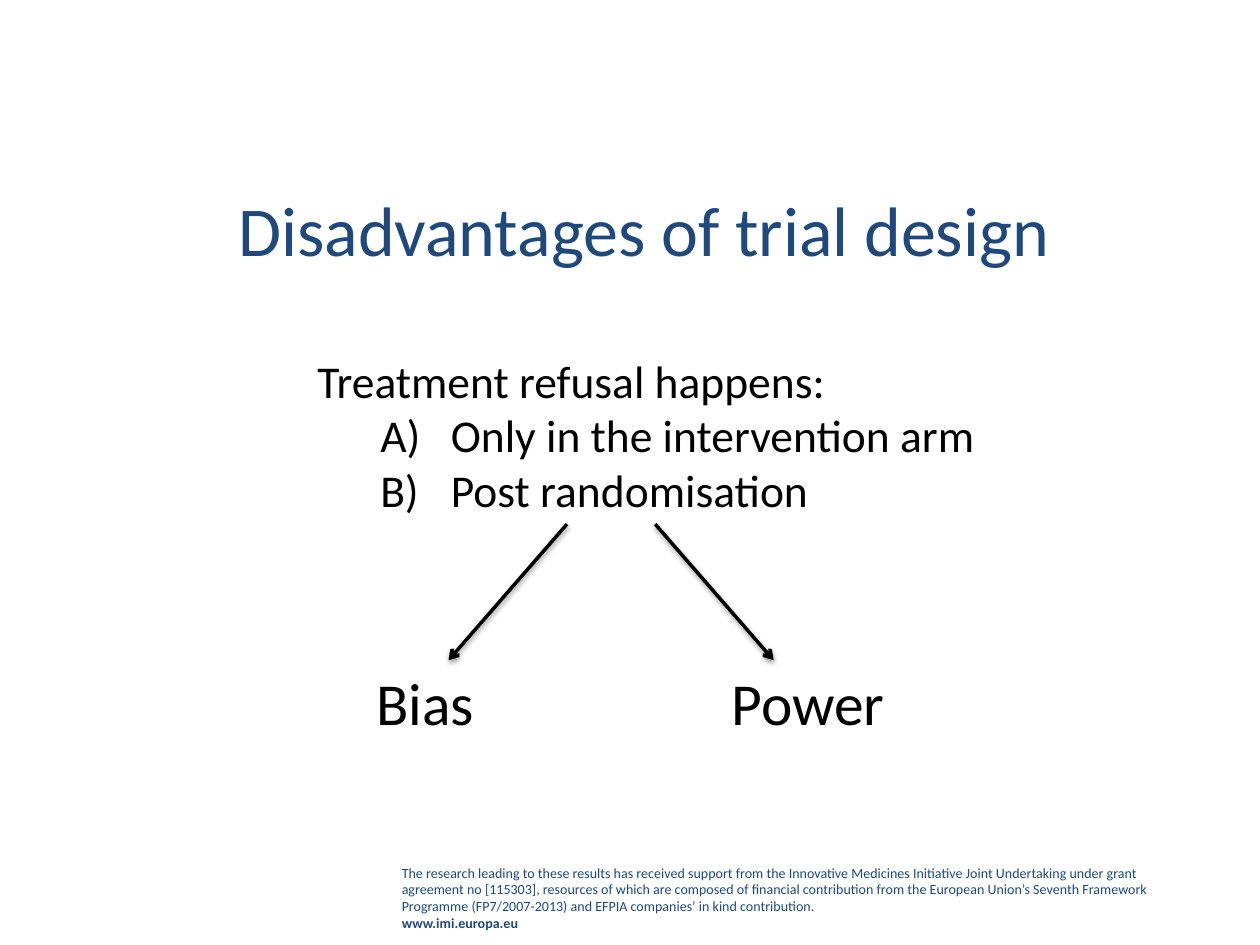
from lxml import etree
from pptx import Presentation
from pptx import util as u
from pptx.dml.color import RGBColor
from pptx.enum import shapes, text
from pptx.oxml import parse_xml
from pptx.oxml.ns import nsdecls, qn

COLORS = {"navy": "1F497D", "black": "000000"}


class SlideBuilder:
    font = "Calibri"

    def __init__(self, slide):
        self.slide = slide

    def run(self, paragraph, words, size, color, bold=False):
        run = paragraph.add_run()
        run.text = words
        run.font.name = self.font
        run.font.size = u.Pt(size)
        run.font.bold = bold
        run.font.color.rgb = RGBColor.from_string(COLORS[color])

    def title(self, words, box, size, color):
        heading = self.slide.shapes.title
        heading.left, heading.top, heading.width, heading.height = map(u.Inches, box)
        heading.text_frame.vertical_anchor = text.MSO_ANCHOR.MIDDLE
        paragraph = heading.text_frame.paragraphs[0]
        paragraph.alignment = text.PP_ALIGN.CENTER
        self.run(paragraph, words, size, color)

    def text_box(self, lines, box, size, color):
        frame = self.slide.shapes.add_textbox(*map(u.Inches, box)).text_frame
        frame.word_wrap = True
        frame.auto_size = text.MSO_AUTO_SIZE.SHAPE_TO_FIT_TEXT
        for index, (words, style) in enumerate(lines):
            paragraph = frame.paragraphs[0] if index == 0 else frame.add_paragraph()
            if style == "lettered":
                self.letter(paragraph)
            self.run(paragraph, words, size, color, bold=style == "bold")

    def letter(self, paragraph):
        paragraph.level = 1
        properties = paragraph._p.get_or_add_pPr()
        properties.set("marL", str(u.Inches(1.06)))
        properties.set("indent", str(u.Inches(-0.56)))
        etree.SubElement(properties, qn("a:buFont"), typeface="+mj-lt")
        etree.SubElement(properties, qn("a:buAutoNum"), type="alphaUcParenR")

    def arrow(self, start, end, color, width):
        points = map(u.Inches, (*start, *end))
        connector = self.slide.shapes.add_connector(shapes.MSO_CONNECTOR.STRAIGHT, *points)
        connector.line.color.rgb = RGBColor.from_string(COLORS[color])
        connector.line.width = u.Pt(width)
        etree.SubElement(connector.line._get_or_add_ln(), qn("a:tailEnd"), type="arrow")
        connector._element.spPr.append(parse_xml(
            f'<a:effectLst {nsdecls("a")}>'
            f'<a:outerShdw blurRad="{u.Pt(3.1)}" dist="{u.Pt(1.6)}" dir="5400000" rotWithShape="0">'
            f'<a:srgbClr val="{COLORS["black"]}"><a:alpha val="38000"/></a:srgbClr>'
            '</a:outerShdw></a:effectLst>'))


def main():
    deck = Presentation()
    deck.slide_width, deck.slide_height = u.Inches(10), u.Inches(7.5)
    builder = SlideBuilder(deck.slides.add_slide(deck.slide_layouts[5]))

    funding = (
        "The research leading to these results has received support from the Innovative "
        "Medicines Initiative Joint Undertaking under grant agreement no [115303], resources "
        "of which are composed of financial contribution from the European Union’s Seventh "
        "Framework Programme (FP7/2007-2013) and EFPIA companies’ in kind contribution."
    )
    builder.text_box([(funding, "plain"), ("www.imi.europa.eu", "bold")],
                     (3.09, 6.81, 6.41, 0.64), 8, "navy")
    builder.title("Disadvantages of trial design", (0.61, 1.19, 9, 1.25), 40, "navy")

    refusal = [
        ("Treatment refusal happens:", "plain"),
        ("Only in the intervention arm", "lettered"),
        ("Post randomisation", "lettered"),
    ]
    builder.text_box(refusal, (2.42, 2.75, 5.77, 1.41), 26, "black")

    arrow_top, effect_top = 4.16, 5.24
    effects = [
        ("Bias", 2.89, 1.33, 4.5, 3.56),
        ("Power", 5.71, 1.71, 5.2, 6.14),
    ]
    for effect, left, width, arrow_start, arrow_end in effects:
        builder.text_box([(effect, "plain")], (left, effect_top, width, 0.67), 34, "black")
        builder.arrow((arrow_start, arrow_top), (arrow_end, effect_top), "black", 2)

    deck.save("out.pptx")


if __name__ == "__main__":
    main()
